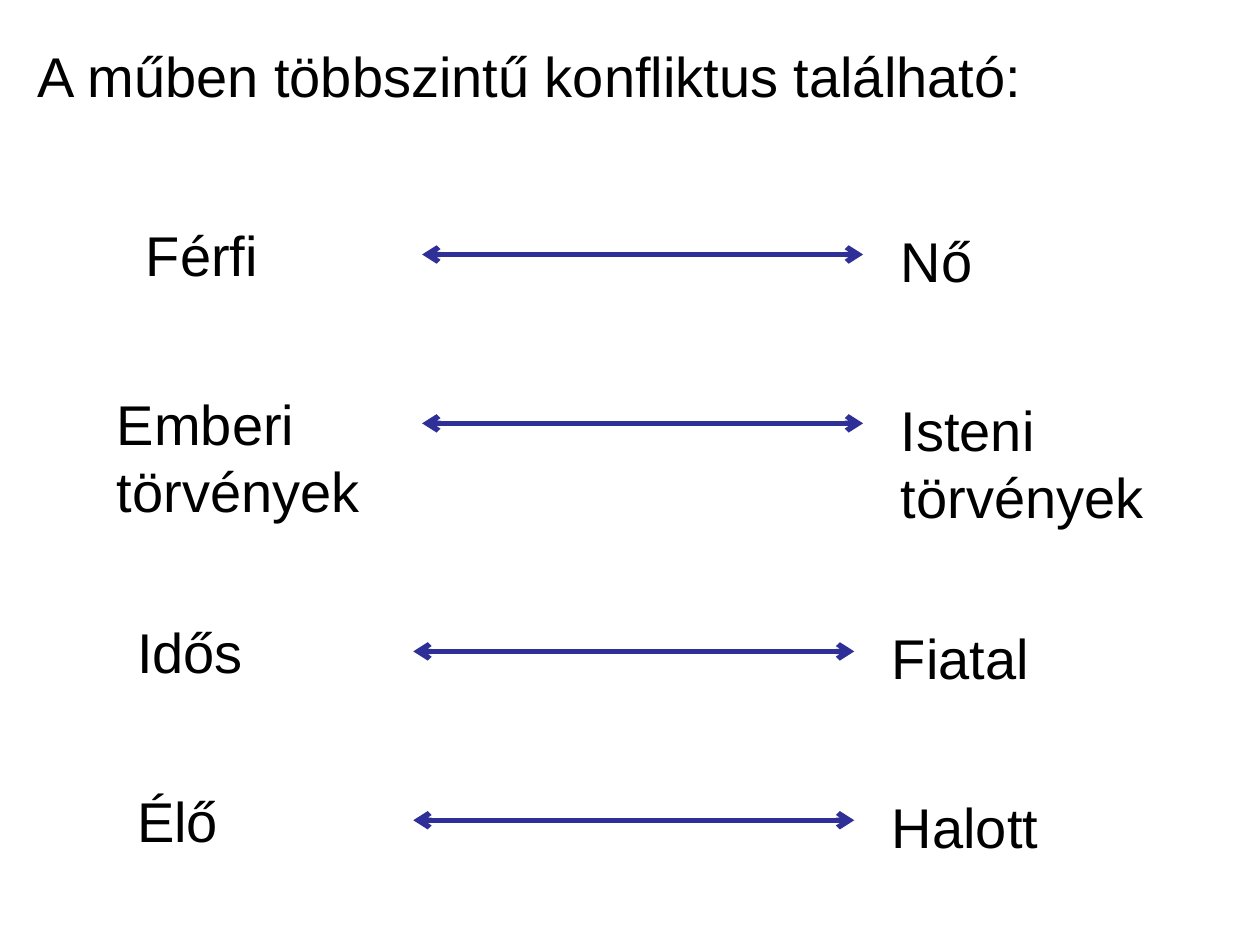
from lxml import etree
from pptx import Presentation
from pptx.dml.color import RGBColor
from pptx.enum.shapes import MSO_CONNECTOR
from pptx.enum.text import MSO_ANCHOR, MSO_AUTO_SIZE, PP_ALIGN
from pptx.oxml.ns import qn
from pptx.util import Inches, Pt

STRAIGHT = MSO_CONNECTOR.STRAIGHT
TOP = MSO_ANCHOR.TOP
GROW = MSO_AUTO_SIZE.SHAPE_TO_FIT_TEXT
NO_FIT = MSO_AUTO_SIZE.NONE
LEFT, JUSTIFY = PP_ALIGN.LEFT, PP_ALIGN.JUSTIFY

FONT, SIZE = "Arial", 32
BLACK, BLUE = "000000", "2F2F98"
TITLE_ONLY = 5
ARROW_LENGTH = 3.5
LABEL_WIDTH = 2.05
LINE_HEIGHT, TWO_LINE_HEIGHT = 0.64, 1.18

# left term, its x and width, right term, its width, arrow x and y, label height
CONFLICTS = [
    ("Férfi", 1.06, LABEL_WIDTH, "Nő", LABEL_WIDTH, 3.35, 2.02, LINE_HEIGHT),
    ("Emberi törvények", 0.83, 2.28, "Isteni törvények", 2.68, 3.35, 3.36, TWO_LINE_HEIGHT),
    ("Idős", 0.99, LABEL_WIDTH, "Fiatal", LABEL_WIDTH, 3.28, 5.17, LINE_HEIGHT),
    ("Élő", 0.99, LABEL_WIDTH, "Halott", LABEL_WIDTH, 3.28, 6.51, LINE_HEIGHT),
]


def color(hex_value):
    return RGBColor.from_string(hex_value)


def write(frame, text, align, fit):
    frame.text = text
    frame.word_wrap = True
    frame.auto_size = fit
    frame.vertical_anchor = TOP
    paragraph = frame.paragraphs[0]
    paragraph.alignment = align
    font = paragraph.runs[0].font
    font.name, font.size = FONT, Pt(SIZE)
    font.color.rgb = color(BLACK)


def place_title(slide, left, top, width, height):
    title = slide.shapes.title
    title.left, title.top = Inches(left), Inches(top)
    title.width, title.height = Inches(width), Inches(height)
    write(title.text_frame, "A műben többszintű konfliktus található:", JUSTIFY, NO_FIT)


def add_label(slide, text, left, top, width, height):
    label = slide.shapes.add_textbox(
        Inches(left), Inches(top), Inches(width), Inches(height))
    write(label.text_frame, text, LEFT, GROW)


def add_double_arrow(slide, left, y, length):
    arrow = slide.shapes.add_connector(
        STRAIGHT, Inches(left), Inches(y), Inches(left + length), Inches(y))
    arrow.line.color.rgb = color(BLUE)
    arrow.line.width = Pt(3)
    outline = arrow.line._get_or_add_ln()
    for end in ("a:headEnd", "a:tailEnd"):
        etree.SubElement(outline, qn(end), type="arrow")
    etree.SubElement(arrow._element.spPr, qn("a:effectLst"))


def add_conflict(slide, left_term, left_x, left_width, right_term, right_width,
                 arrow_x, y, height):
    add_double_arrow(slide, arrow_x, y, ARROW_LENGTH)
    add_label(slide, left_term, left_x, y - 0.32, left_width, height)
    right_x = arrow_x + ARROW_LENGTH + 0.2
    add_label(slide, right_term, right_x, y - 0.27, right_width, height)


def main():
    deck = Presentation()
    deck.slide_width, deck.slide_height = Inches(10), Inches(7.5)
    slide = deck.slides.add_slide(deck.slide_layouts[TITLE_ONLY])

    # Heading
    place_title(slide, 0.2, 0.28, 9.61, 6.93)

    # Opposing pairs
    for conflict in CONFLICTS:
        add_conflict(slide, *conflict)

    deck.save("out.pptx")


if __name__ == "__main__":
    main()
